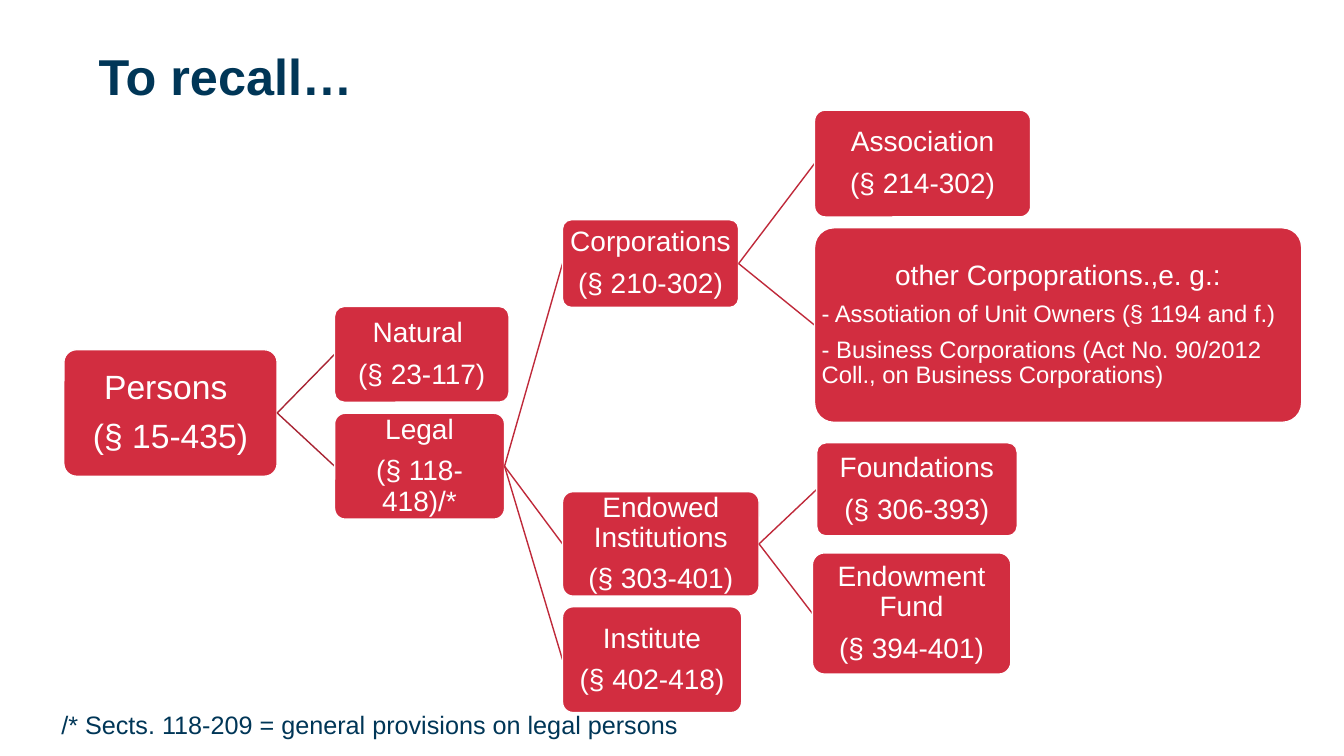
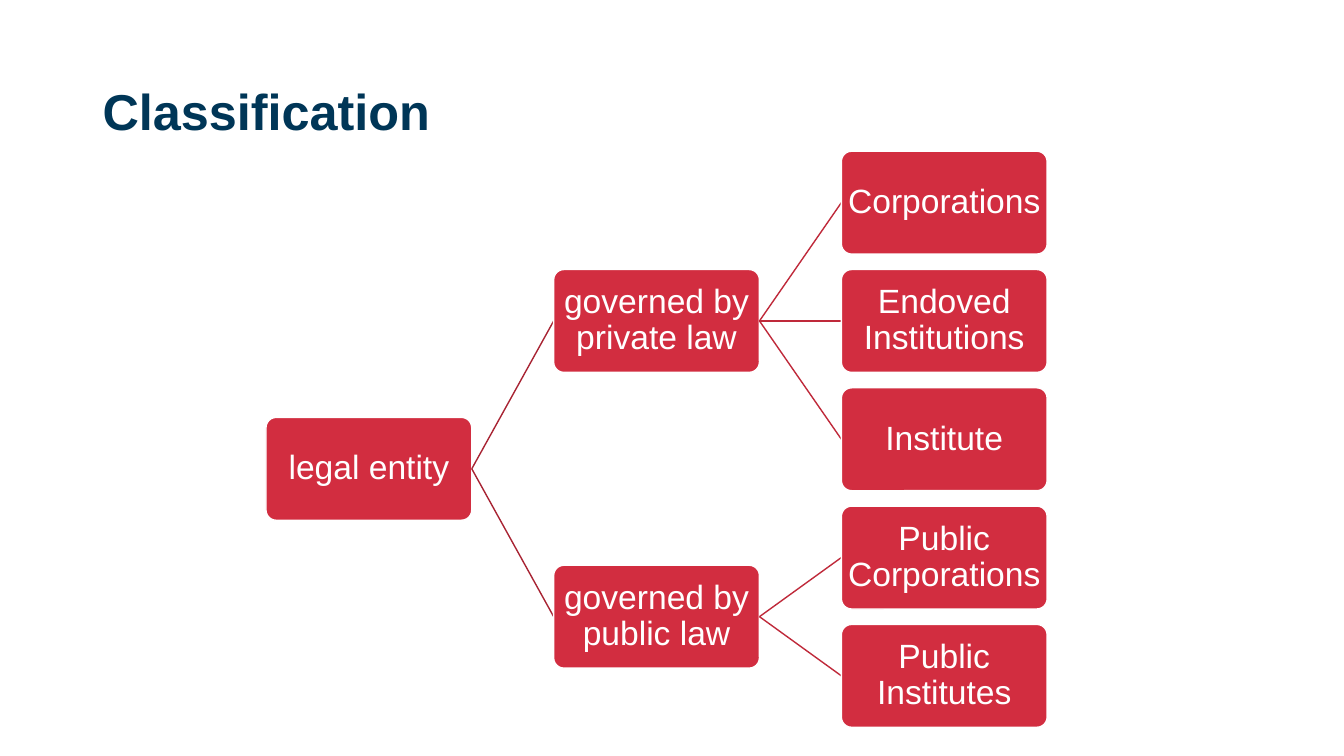
from collections import namedtuple
from dataclasses import dataclass
from lxml import etree
from pptx import Presentation
from pptx.dml.color import RGBColor as Color
from pptx.enum.shapes import MSO_CONNECTOR as Connector, MSO_SHAPE as Shape
from pptx.enum.text import MSO_ANCHOR as Anchor, PP_ALIGN as Align
from pptx.oxml.ns import qn
from pptx.util import Pt


@dataclass(frozen=True)
class Theme:
    font: str = "Arial"
    ink: Color = Color.from_string("003657")
    node: Color = Color.from_string("D22D40")
    white: Color = Color.from_string("FFFFFF")
    first_line: Color = Color.from_string("A82433")
    next_line: Color = Color.from_string("BF293A")
    title: int = 36
    large: int = 24
    medium: int = 20
    note: int = 18
    detail: int = 17
    corner: float = 0.1
    leading: float = 0.9
    gap: float = 0.4


THEME = Theme()
Box = namedtuple("Box", "left top width height")
Node = namedtuple("Node", "parent box size lines details", defaults=((),))

RECALL = {
    "persons": Node(None, Box(45.6, 249.8, 152.4, 90.4), THEME.large,
                    ["Persons ", "(§ 15-435)"]),
    "natural": Node("persons", Box(239, 218.9, 124.6, 68.4), THEME.medium,
                    ["Natural ", "(§ 23-117)"]),
    "legal": Node("persons", Box(239, 295.2, 121.4, 75.6), THEME.medium,
                  ["Legal", "(§ 118-418)/*"]),
    "corporations": Node("legal", Box(401.8, 157, 125.8, 62.6), THEME.medium,
                         ["Corporations", "(§ 210-302)"]),
    "association": Node("corporations", Box(581.8, 78.7, 154.4, 76.3), THEME.medium,
                        ["Association", "(§ 214-302)"]),
    "other": Node("corporations", Box(581.8, 162.7, 348, 139), THEME.medium,
                  ["other Corpoprations.,e. g.:"],
                  ["- Assotiation of Unit Owners (§ 1194 and f.)",
                   "- Business Corporations (Act No. 90/2012 Coll., on Business Corporations)"]),
    "endowed": Node("legal", Box(401.8, 351.2, 140.4, 74.6), THEME.medium,
                    ["Endowed Institutions", "(§ 303-401)"]),
    "foundations": Node("endowed", Box(583.4, 316.3, 143.2, 66.5), THEME.medium,
                        ["Foundations", "(§ 306-393)"]),
    "fund": Node("endowed", Box(580.3, 394.9, 141.8, 86.6), THEME.medium,
                 ["Endowment Fund", "(§ 394-401)"]),
    "institute": Node("legal", Box(401.8, 433.4, 128, 75.6), THEME.medium,
                      ["Institute", "(§ 402-418)"]),
}
RECALL_NOTE = "/* Sects. 118-209 = general provisions on legal persons"

CLASSES = ("legal entity", [
    ("governed by private law", [
        ("Corporations", []),
        ("Endoved Institutions", []),
        ("Institute", []),
    ]),
    ("governed by public law", [
        ("Public Corporations", []),
        ("Public Institutes", []),
    ]),
])
GRID = Box(190, 108, 147, 73.5)
COLUMN_STEP, ROW_STEP = 205.5, 84.5


def grid_tree(tree):
    nodes = {}
    leaf_count = 0

    def place(branch, parent, level):
        nonlocal leaf_count
        label, children = branch
        nodes[label] = None
        tops = [place(child, label, level + 1) for child in children]
        if tops:
            top = (tops[0] + tops[-1]) / 2
        else:
            top = GRID.top + leaf_count * ROW_STEP
            leaf_count += 1
        box = GRID._replace(left=GRID.left + level * COLUMN_STEP, top=top)
        nodes[label] = Node(parent, box, THEME.large, [label])
        return top

    place(tree, None, 0)
    return nodes


def points(*values):
    return [Pt(value) for value in values]


def add_span(para, text, size, color, bold=False):
    span = para.add_run()
    span.text = text
    font = span.font
    font.name, font.size, font.bold = THEME.font, Pt(size), bold
    font.color.rgb = color


def add_label(page, box, text, size, bold=False, anchor=Anchor.TOP):
    frame = page.shapes.add_textbox(*points(*box)).text_frame
    frame.word_wrap = True
    frame.vertical_anchor = anchor
    add_span(frame.paragraphs[0], text, size, THEME.ink, bold)


def add_node(page, node):
    shape = page.shapes.add_shape(Shape.ROUNDED_RECTANGLE, *points(*node.box))
    shape.adjustments[0] = THEME.corner
    shape.shadow.inherit = False
    shape.fill.solid()
    shape.fill.fore_color.rgb = THEME.node
    shape.line.color.rgb = THEME.white
    shape.line.width = Pt(1)

    frame = shape.text_frame
    frame.word_wrap = True
    frame.vertical_anchor = Anchor.MIDDLE
    inset = Pt(node.size / 20)
    frame.margin_left = frame.margin_right = inset
    frame.margin_top = frame.margin_bottom = inset

    rows = [(text, node.size, Align.CENTER) for text in node.lines]
    rows += [(text, THEME.detail, Align.LEFT) for text in node.details]
    for index, (text, size, align) in enumerate(rows):
        para = frame.add_paragraph() if index else frame.paragraphs[0]
        para.alignment = align
        para.line_spacing = THEME.leading
        if index < len(rows) - 1:
            para.space_after = Pt(size * THEME.gap)
        add_span(para, text, size, THEME.white)


def add_link(page, parent, child):
    start, end = parent.box, child.box
    link = page.shapes.add_connector(
        Connector.STRAIGHT,
        *points(start.left + start.width, start.top + start.height / 2,
                end.left, end.top + end.height / 2))
    link.line.color.rgb = THEME.next_line if parent.parent else THEME.first_line
    link.line.width = Pt(1)
    etree.SubElement(link._element.spPr, qn("a:effectLst"))


def add_tree_page(deck, title, title_box, nodes):
    page = deck.slides.add_slide(deck.slide_layouts[6])
    add_label(page, title_box, title, THEME.title, True, Anchor.BOTTOM)
    for node in nodes.values():
        if node.parent:
            add_link(page, nodes[node.parent], node)
        add_node(page, node)
    return page


def main():
    deck = Presentation()
    deck.slide_width, deck.slide_height = points(960, 540)
    recall = add_tree_page(deck, "To recall…", Box(63.4, 21.6, 828, 57), RECALL)
    add_label(recall, Box(36.7, 503.3, 480, 29), RECALL_NOTE, THEME.note)
    add_tree_page(deck, "Classification", Box(66.2, 26, 828, 77.7), grid_tree(CLASSES))
    deck.save("out.pptx")


if __name__ == "__main__":
    main()
